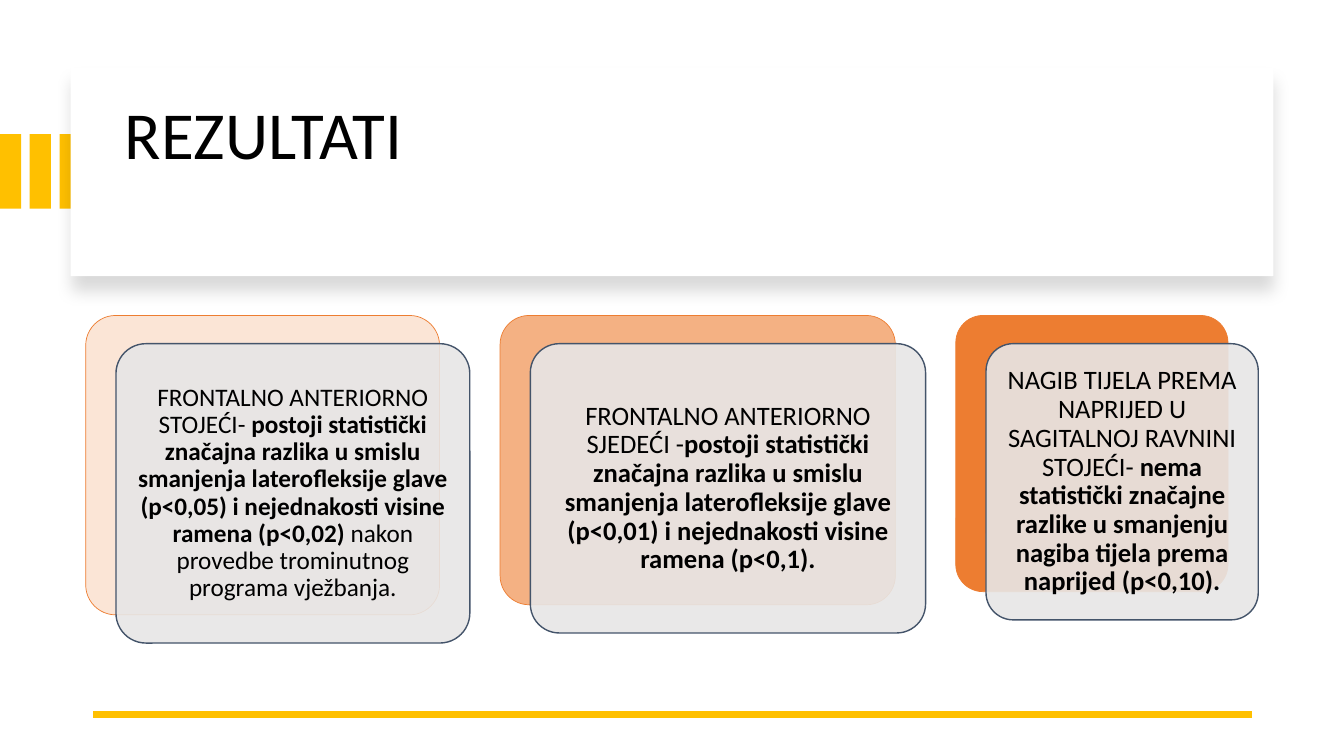
"""Builds the REZULTATI slide: a shadowed title panel and three overlapping result cards."""
from lxml import etree
from pptx import Presentation
from pptx import util as u
from pptx.dml.color import RGBColor
from pptx.enum import shapes, text
from pptx.oxml.ns import qn

deck = Presentation()
deck.slide_width, deck.slide_height = u.Inches(13.33), u.Inches(7.5)
slide = deck.slides.add_slide(deck.slide_layouts[6])


def rgb(value):
    return RGBColor.from_string(value)


def block(kind, left, top, width, height, fill, outline=None, weight=0):
    shape = slide.shapes.add_shape(kind, *map(u.Inches, (left, top, width, height)))
    shape.shadow.inherit = False
    shape.fill.solid()
    shape.fill.fore_color.rgb = rgb(fill)
    if outline:
        shape.line.color.rgb = rgb(outline)
        shape.line.width = u.Pt(weight)
        shape.adjustments[0] = 0.1
    else:
        shape.line.fill.background()
    return shape


RECT = shapes.MSO_SHAPE.RECTANGLE
ROUND = shapes.MSO_SHAPE.ROUNDED_RECTANGLE

for stripe in range(3):
    block(RECT, stripe * 0.295, 1.33, 0.21, 0.74, "FFC000")

panel = block(RECT, 0.7, 0.67, 11.93, 2.07, "FFFFFF")
effects = panel._element.spPr.find(qn("a:effectLst"))
shadow = etree.SubElement(effects, qn("a:outerShdw"), blurRad=str(u.Pt(11)),
                          dist=str(u.Pt(10)), dir="5400000", algn="t", rotWithShape="0")
shadow_color = etree.SubElement(shadow, qn("a:srgbClr"), val="000000")
etree.SubElement(shadow_color, qn("a:alpha"), val="15000")

title = slide.shapes.add_textbox(*map(u.Inches, (1.14, 0.89, 11.13, 1.7))).text_frame
title.word_wrap = True
title.margin_top = u.Inches(0.12)
heading = title.paragraphs[0]
heading.line_spacing = 0.9
heading.font.size, heading.font.name = u.Pt(48), "Calibri"
heading.font.color.rgb = rgb("000000")
heading.add_run().text = "REZULTATI"

rule = slide.shapes.add_connector(shapes.MSO_CONNECTOR.STRAIGHT,
                                  *map(u.Inches, (12.42, 7.09, 0.92, 7.09)))
rule.line.color.rgb = rgb("FFC000")
rule.line.width = u.Pt(4.5)
etree.SubElement(rule._element.spPr, qn("a:effectLst"))

results = [
    (3.51, 2.97, "FBE5D6", 18, 0.07, [
        ("FRONTALNO ANTERIORNO STOJEĆI- ", False),
        ("postoji statistički značajna razlika u smislu smanjenja laterofleksije glave "
         "(p<0,05) i nejednakosti visine ramena (p<0,02)", True),
        (" nakon provedbe trominutnog programa vježbanja.", False)]),
    (3.92, 2.87, "F4B183", 19, 0.08, [
        ("FRONTALNO ANTERIORNO SJEDEĆI -", False),
        ("postoji statistički značajna razlika u smislu smanjenja laterofleksije glave "
         "(p<0,01) i nejednakosti visine ramena (p<0,1).", True)]),
    (2.7, 2.74, "ED7D31", 19, 0.08, [
        ("NAGIB TIJELA PREMA NAPRIJED U SAGITALNOJ RAVNINI STOJEĆI- ", False),
        ("nema statistički značajne razlike u smanjenju nagiba tijela prema naprijed "
         "(p<0,10).", True)]),
]
left, top, step_x, step_y, gap = 0.85, 3.13, 0.3, 0.28, 0.6

for width, height, tint, size, inset, wording in results:
    block(ROUND, left, top, width, height, tint, "ED7D31", 0.5)
    card = block(ROUND, left + step_x, top + step_y, width, height, "E7E6E6", "44546A", 1)
    card_color = card._element.spPr.find(qn("a:solidFill"))[0]
    etree.SubElement(card_color, qn("a:alpha"), val="90000")
    frame = card.text_frame
    frame.word_wrap = True
    frame.vertical_anchor = text.MSO_ANCHOR.MIDDLE
    frame.margin_left = frame.margin_right = u.Inches(inset)
    frame.margin_top = frame.margin_bottom = u.Inches(inset)
    finding = frame.paragraphs[0]
    finding.alignment = text.PP_ALIGN.CENTER
    finding.line_spacing = 0.9
    finding.font.size, finding.font.name = u.Pt(size), "Calibri"
    finding.font.color.rgb = rgb("000000")
    for words, bold in wording:
        run = finding.add_run()
        run.text, run.font.bold = words, bold
    left += width + gap

deck.save("out.pptx")
